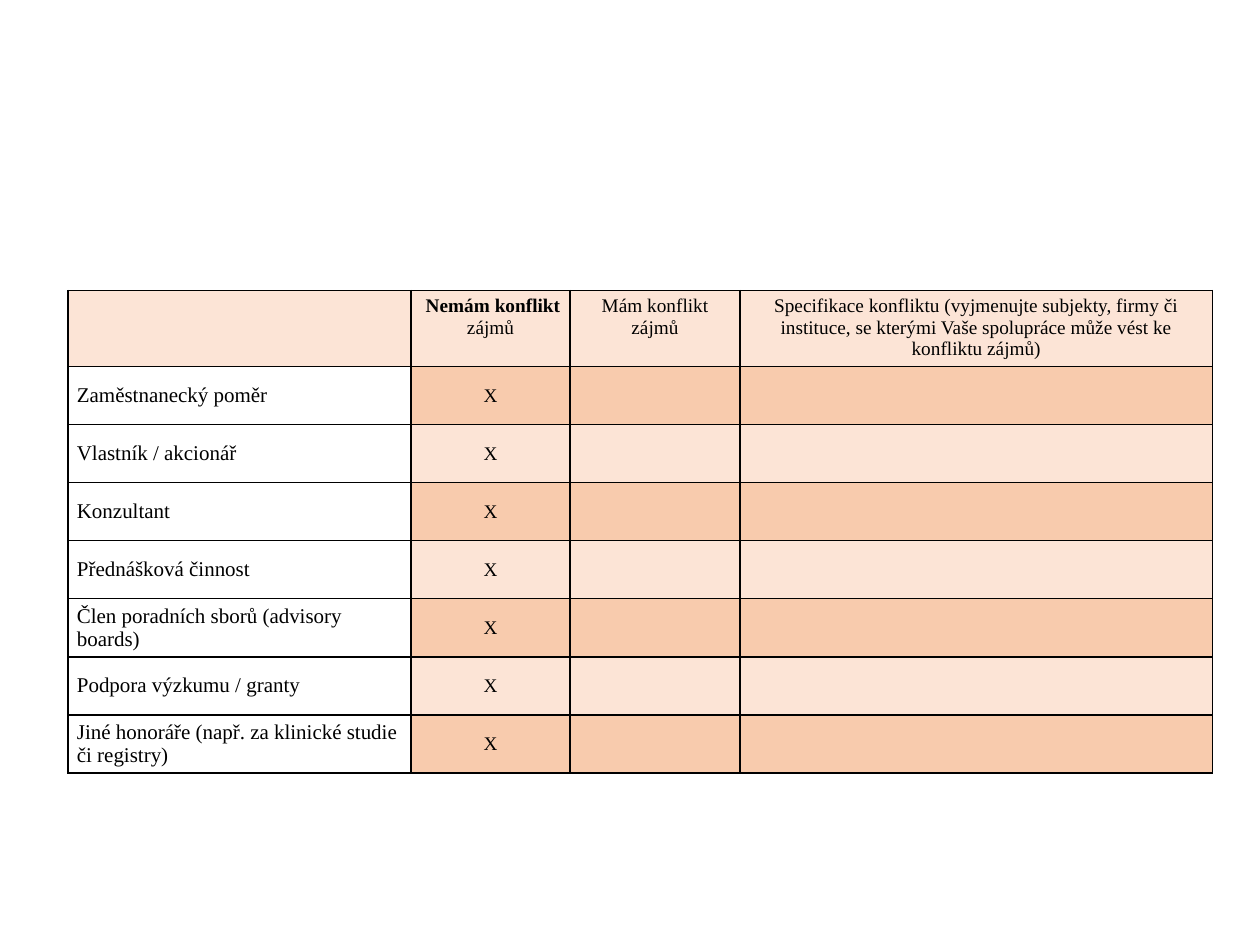
from lxml.etree import SubElement
from pptx import Presentation
from pptx.dml.color import RGBColor
from pptx.enum.text import MSO_ANCHOR, PP_ALIGN
from pptx.oxml.ns import qn
from pptx.util import Cm, Pt

# Content: each header cell is a list of paragraphs, each a list of (text, bold) runs
HEADERS = [
    [],
    [[(" ", False), ("Nemám konflikt ", True)], [("zájmů", False)]],
    [[("Mám konflikt zájmů", False)]],
    [[("Specifikace konfliktu (vyjmenujte subjekty, firmy či instituce, "
       "se kterými Vaše spolupráce může vést ke konfliktu zájmů)", False)]],
]
RELATIONSHIPS = [
    "Zaměstnanecký poměr",
    "Vlastník / akcionář",
    "Konzultant",
    "Přednášková činnost",
    "Člen poradních sborů (advisory boards)",
    "Podpora výzkumu / granty",
    "Jiné honoráře (např. za klinické studie či registry)",
]
NO_CONFLICT = "X"

# Layout and style
LEFT, TOP = 1.37, 5.86
COLUMN_WIDTHS = [6.92, 3.2, 3.43, 9.52]
HEADER_HEIGHT, ROW_HEIGHT = 1.53, 1.17
FONT = "Times New Roman"
BLACK, WHITE, LIGHT, DARK = "000000", "FFFFFF", "FCE4D6", "F8CBAD"


def color(value):
    return RGBColor.from_string(value)


def add_borders(cell):
    properties = cell._tc.get_or_add_tcPr()
    for position, side in enumerate(("a:lnL", "a:lnR", "a:lnT", "a:lnB")):
        line = SubElement(properties, qn(side), w=str(Pt(1)))
        fill = SubElement(line, qn("a:solidFill"))
        SubElement(fill, qn("a:srgbClr"), val=BLACK)
        properties.insert(position, line)


def format_cell(cell, fill, paragraphs, size=11, alignment=PP_ALIGN.CENTER,
                anchor=MSO_ANCHOR.MIDDLE):
    cell.fill.solid()
    cell.fill.fore_color.rgb = color(fill)
    add_borders(cell)
    cell.margin_left = cell.margin_right = Cm(0.18)
    cell.margin_top = cell.margin_bottom = Cm(0.1)
    cell.vertical_anchor = anchor
    frame = cell.text_frame
    for index, runs in enumerate(paragraphs):
        paragraph = frame.paragraphs[0] if index == 0 else frame.add_paragraph()
        paragraph.alignment = alignment
        for text, bold in runs:
            run = paragraph.add_run()
            run.text = text
            run.font.name = FONT
            run.font.size = Pt(size)
            run.font.bold = bold
            run.font.color.rgb = color(BLACK)


def main():
    presentation = Presentation()
    presentation.slide_width, presentation.slide_height = Cm(25.4), Cm(19.05)
    slide = presentation.slides.add_slide(presentation.slide_layouts[6])

    # Table grid
    row_heights = [HEADER_HEIGHT] + [ROW_HEIGHT] * len(RELATIONSHIPS)
    table = slide.shapes.add_table(
        len(row_heights), len(COLUMN_WIDTHS), Cm(LEFT), Cm(TOP),
        Cm(sum(COLUMN_WIDTHS)), Cm(sum(row_heights))).table
    table.first_row = table.horz_banding = False
    for column, width in zip(table.columns, COLUMN_WIDTHS):
        column.width = Cm(width)
    for row, height in zip(table.rows, row_heights):
        row.height = Cm(height)

    # Header row
    for index, paragraphs in enumerate(HEADERS):
        format_cell(table.cell(0, index), LIGHT, paragraphs, anchor=MSO_ANCHOR.TOP)

    # Relationship rows with alternating bands
    for row, name in enumerate(RELATIONSHIPS, start=1):
        band = DARK if row % 2 else LIGHT
        format_cell(table.cell(row, 0), WHITE, [[(name, False)]], 12, PP_ALIGN.LEFT)
        format_cell(table.cell(row, 1), band, [[(NO_CONFLICT, False)]])
        for column in (2, 3):
            format_cell(table.cell(row, column), band, [])

    presentation.save("out.pptx")


if __name__ == "__main__":
    main()
